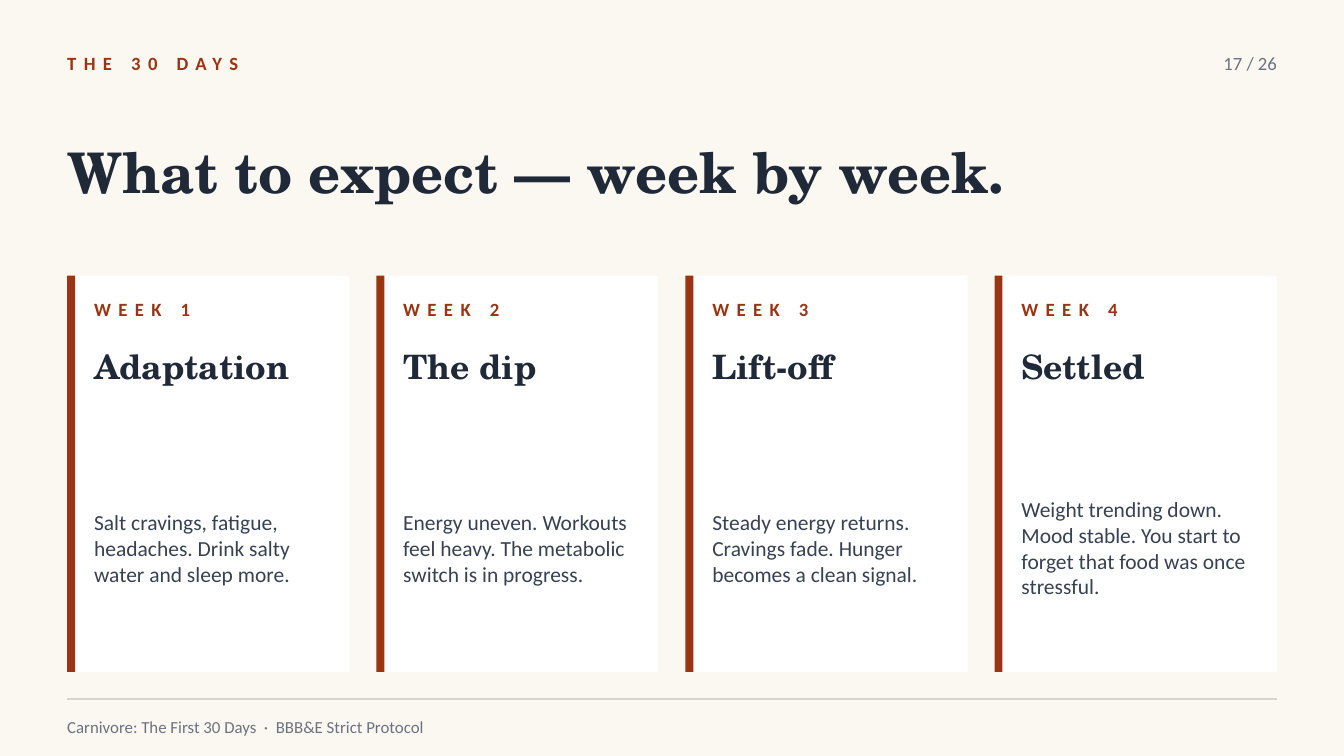
from dataclasses import dataclass

from lxml import etree
from pptx import Presentation
from pptx.dml.color import RGBColor
from pptx.enum.shapes import MSO_CONNECTOR, MSO_SHAPE
from pptx.enum.text import MSO_ANCHOR, MSO_AUTO_SIZE, PP_ALIGN
from pptx.oxml.ns import qn
from pptx.util import Pt

RECTANGLE = MSO_SHAPE.RECTANGLE
STRAIGHT = MSO_CONNECTOR.STRAIGHT
MIDDLE = MSO_ANCHOR.MIDDLE
NO_AUTOFIT = MSO_AUTO_SIZE.NONE
LEFT, RIGHT = PP_ALIGN.LEFT, PP_ALIGN.RIGHT

EMU_PER_PX = 4572
SLIDE_WIDTH, SLIDE_HEIGHT = 2000, 1125
MARGIN = 100
CONTENT_WIDTH = SLIDE_WIDTH - 2 * MARGIN
CARD_TOP, CARD_WIDTH, CARD_HEIGHT, CARD_GAP = 410, 420, 590, 40
ACCENT_WIDTH, CARD_INDENT, CARD_TEXT_WIDTH = 12, 40, 370
RULE_TOP = 1040

WEEKS = [
    ("Adaptation", "Salt cravings, fatigue, headaches. Drink salty water and sleep more."),
    ("The dip", "Energy uneven. Workouts feel heavy. The metabolic switch is in progress."),
    ("Lift-off", "Steady energy returns. Cravings fade. Hunger becomes a clean signal."),
    ("Settled", "Weight trending down. Mood stable. You start to forget that food was once stressful."),
]


@dataclass(frozen=True)
class TextStyle:
    font: str
    size: float
    color: str
    bold: bool = False
    tracking: int = 0


@dataclass(frozen=True)
class Theme:
    background: str = "FBF8F2"
    card: str = "FFFFFF"
    accent: str = "9A3412"
    rule: str = "D6D3D1"
    rule_width: float = 0.75
    title: TextStyle = TextStyle("TeX Gyre Schola", 30, "1F2937", bold=True)
    heading: TextStyle = TextStyle("TeX Gyre Schola", 18, "1F2937", bold=True)
    label: TextStyle = TextStyle("Calibri", 10, "9A3412", bold=True, tracking=4)
    body: TextStyle = TextStyle("Calibri", 11.5, "374151")
    page: TextStyle = TextStyle("Calibri", 10, "6B7280")
    footer: TextStyle = TextStyle("Calibri", 9, "6B7280")


THEME = Theme()


def px(*lengths):
    return [length * EMU_PER_PX for length in lengths]


def write_text(shape, text, style, align=LEFT):
    frame = shape.text_frame
    frame.text = text
    frame.word_wrap = True
    frame.auto_size = NO_AUTOFIT
    frame.vertical_anchor = MIDDLE
    frame.margin_left = frame.margin_top = frame.margin_right = frame.margin_bottom = 0
    paragraph = frame.paragraphs[0]
    paragraph.alignment = align
    for run in paragraph.runs:
        run.font.name = style.font
        run.font.size = Pt(style.size)
        run.font.bold = style.bold
        run.font.color.rgb = RGBColor.from_string(style.color)
        if style.tracking:
            run._r.get_or_add_rPr().set("spc", str(style.tracking * 100))


def add_title(slide, text, left, top, width, height):
    title = slide.shapes.title
    title.left, title.top, title.width, title.height = px(left, top, width, height)
    write_text(title, text, THEME.title)


def add_text(slide, text, style, left, top, width, height, align=LEFT):
    box = slide.shapes.add_textbox(*px(left, top, width, height))
    write_text(box, text, style, align)


def add_rectangle(slide, color, left, top, width, height):
    shape = slide.shapes.add_shape(RECTANGLE, *px(left, top, width, height))
    shape.shadow.inherit = False
    shape.fill.solid()
    shape.fill.fore_color.rgb = RGBColor.from_string(color)
    shape.line.fill.background()


def add_rule(slide, left, top, width):
    rule = slide.shapes.add_connector(STRAIGHT, *px(left, top, left + width, top))
    rule.line.color.rgb = RGBColor.from_string(THEME.rule)
    rule.line.width = Pt(THEME.rule_width)
    etree.SubElement(rule._element.spPr, qn("a:effectLst"))


def add_week_card(slide, number, heading, body):
    left = MARGIN + (number - 1) * (CARD_WIDTH + CARD_GAP)
    text_left = left + CARD_INDENT
    add_rectangle(slide, THEME.card, left, CARD_TOP, CARD_WIDTH, CARD_HEIGHT)
    add_rectangle(slide, THEME.accent, left, CARD_TOP, ACCENT_WIDTH, CARD_HEIGHT)
    rows = [
        (f"WEEK {number}", THEME.label, 20, 60),
        (heading, THEME.heading, 90, 90),
        (body, THEME.body, 220, 370),
    ]
    for text, style, offset, height in rows:
        add_text(slide, text, style, text_left, CARD_TOP + offset, CARD_TEXT_WIDTH, height)


def main():
    """Build the week-by-week slide and save it."""
    presentation = Presentation()
    presentation.slide_width, presentation.slide_height = px(SLIDE_WIDTH, SLIDE_HEIGHT)
    slide = presentation.slides.add_slide(presentation.slide_layouts[5])
    slide.background.fill.solid()
    slide.background.fill.fore_color.rgb = RGBColor.from_string(THEME.background)

    add_text(slide, "THE 30 DAYS", THEME.label, MARGIN, 64, 1200, 60)
    add_text(slide, "17 / 26", THEME.page, 1700, 64, 200, 60, RIGHT)
    add_title(slide, "What to expect — week by week.", MARGIN, 150, CONTENT_WIDTH, 210)
    for number, (heading, body) in enumerate(WEEKS, start=1):
        add_week_card(slide, number, heading, body)
    add_rule(slide, MARGIN, RULE_TOP, CONTENT_WIDTH)
    footer = "Carnivore: The First 30 Days  ·  BBB&E Strict Protocol"
    add_text(slide, footer, THEME.footer, MARGIN, 1056, CONTENT_WIDTH, 50)
    presentation.save("out.pptx")


if __name__ == "__main__":
    main()
